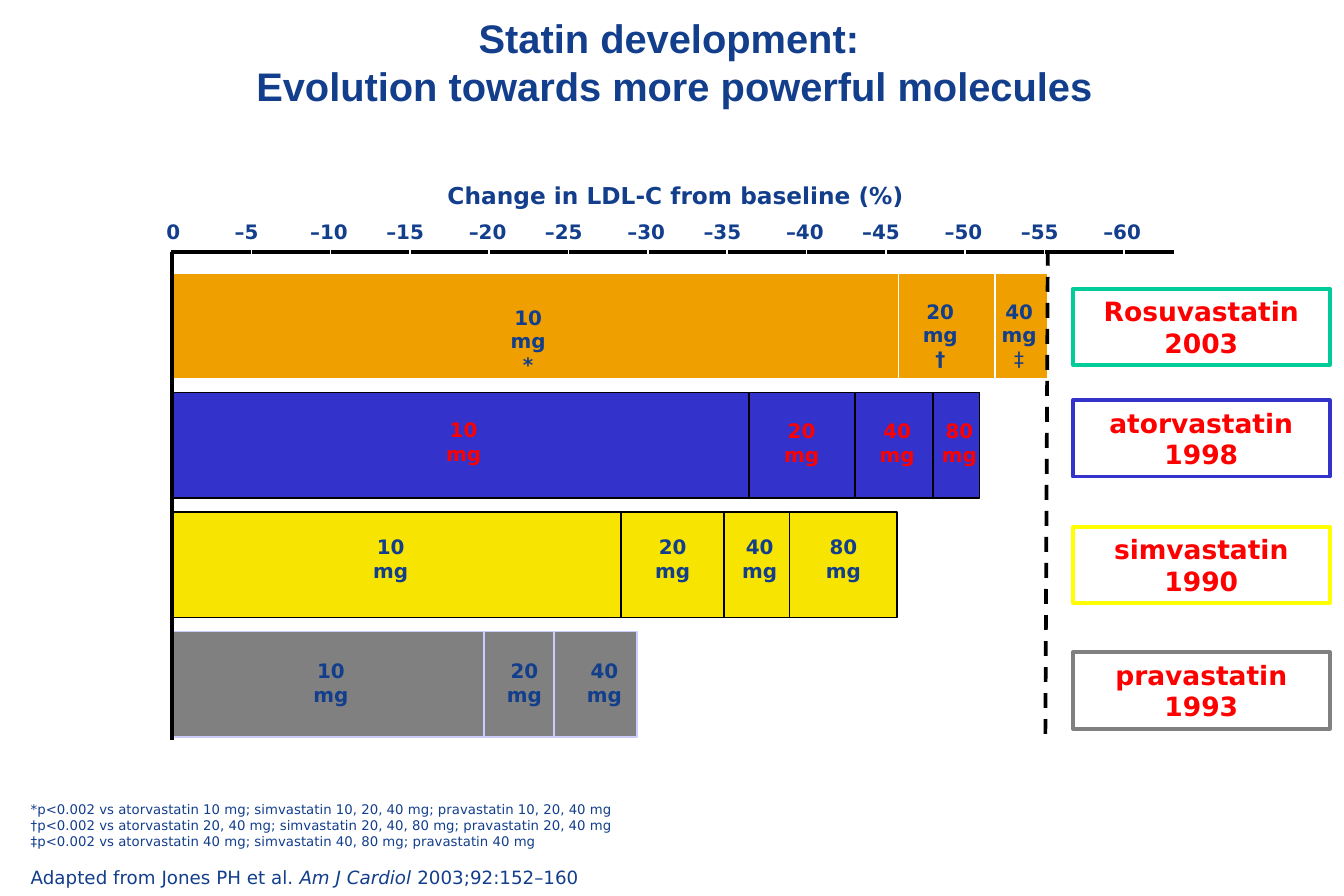
import pptx
import pptx.util
import pptx.dml.color
import pptx.enum.dml
import pptx.enum.shapes
import pptx.enum.text
import pptx.oxml.ns
from dataclasses import dataclass
from lxml import etree

Pt = pptx.util.Pt
ALIGN = pptx.enum.text.PP_ALIGN
ANCHOR = pptx.enum.text.MSO_ANCHOR


@dataclass(frozen=True)
class Theme:
    """Colours, fonts and type sizes of the slide."""
    navy: str = "123E8C"
    red: str = "FF0000"
    black: str = "000000"
    white: str = "FFFFFF"
    orange: str = "EFA000"
    blue: str = "3333CC"
    yellow: str = "F7E400"
    grey: str = "808080"
    lilac: str = "CCCCFF"
    green: str = "00CC99"
    bright_yellow: str = "FFFF00"
    head: str = "Arial"
    body: str = "DejaVu Sans"
    title: int = 24
    name: int = 16
    heading: int = 14
    label: int = 12
    source: int = 11
    note: int = 8


T = Theme()
BAR_PITCH, BAR_HEIGHT = 72, 63.6
TICK_STEP, TICK_COUNT = 47.8, 12

# Each dose: right edge, label centre, label drop, label lines
STATINS = [
    ("Rosuvastatin", "2003", T.orange, T.white, T.navy, T.green, 9.4, [
        (437.8, 214.6, 15.8, ["10", "mg", "*"]),
        (496.1, 463, 12.2, ["20", "mg", "†"]),
        (527.8, 510.5, 12.2, ["40", "mg", "‡"])]),
    ("atorvastatin", "1998", T.blue, T.black, T.red, T.blue, 4.6, [
        (347.8, 175.7, 11.5, ["10", "mg"]),
        (411.8, 379.4, 12.2, ["20", "mg"]),
        (458.6, 437, 12.2, ["40", "mg"]),
        (486.7, 474.5, 12.2, ["80", "mg"])]),
    ("simvastatin", "1990", T.yellow, T.black, T.navy, T.bright_yellow, 8.9, [
        (270.7, 131.8, 10.2, ["10", "mg"]),
        (332.6, 301.7, 10.2, ["20", "mg"]),
        (372.2, 354.2, 10.2, ["40", "mg"]),
        (437, 404.6, 10.2, ["80", "mg"])]),
    ("pravastatin", "1993", T.grey, T.lilac, T.navy, T.grey, 12.5, [
        (187.9, 95.8, 13, ["10", "mg"]),
        (230.4, 212.4, 13, ["20", "mg"]),
        (280.1, 260.6, 12.6, ["40", "mg"])]),
]

NOTES = [
    "*p<0.002 vs atorvastatin 10 mg; simvastatin 10, 20, 40 mg; pravastatin 10, 20, 40 mg",
    "†p<0.002 vs atorvastatin 20, 40 mg; simvastatin 20, 40, 80 mg; pravastatin 20, 40 mg",
    "‡p<0.002 vs atorvastatin 40 mg; simvastatin 40, 80 mg; pravastatin 40 mg",
]


def rgb(color):
    """Return the colour object of a hex string."""
    return pptx.dml.color.RGBColor.from_string(color)


def add_run(p, text, size, color=T.navy, bold=True, italic=False, font=T.body):
    """Add one formatted run to a paragraph."""
    r = p.add_run()
    r.text = text
    r.font.size, r.font.name = Pt(size), font
    r.font.bold, r.font.italic = bold, italic
    r.font.color.rgb = rgb(color)


def add_lines(tf, lines, size, color=T.navy):
    """Fill a text frame with centred bold lines."""
    for i, line in enumerate(lines):
        p = tf.add_paragraph() if i else tf.paragraphs[0]
        p.alignment = ALIGN.CENTER
        add_run(p, line, size, color, bold=line != "‡")


def add_box(s, x, y, w, h, wrap=True):
    """Add a text box and return its text frame."""
    tf = s.shapes.add_textbox(Pt(x), Pt(y), Pt(w), Pt(h)).text_frame
    tf.word_wrap = wrap
    return tf


def add_rect(s, x, y, w, h, fill, line, weight):
    """Add a rectangle, unfilled if fill is None."""
    sp = s.shapes.add_shape(pptx.enum.shapes.MSO_SHAPE.RECTANGLE, Pt(x), Pt(y), Pt(w), Pt(h))
    sp.shadow.inherit = False
    if fill:
        sp.fill.solid()
        sp.fill.fore_color.rgb = rgb(fill)
    else:
        sp.fill.background()
    sp.line.color.rgb, sp.line.width = rgb(line), Pt(weight)
    return sp


def add_line(s, x1, y1, x2, y2, color, weight):
    """Add a straight line without shadow."""
    c = s.shapes.add_connector(pptx.enum.shapes.MSO_CONNECTOR.STRAIGHT,
                               Pt(x1), Pt(y1), Pt(x2), Pt(y2))
    c.line.color.rgb, c.line.width = rgb(color), Pt(weight)
    etree.SubElement(c._element.spPr, pptx.oxml.ns.qn("a:effectLst"))
    return c


def add_title(s, x, y, w, h):
    """Place the two-line title."""
    p = add_box(s, x, y, w, h).paragraphs[0]
    p.alignment = ALIGN.CENTER
    add_run(p, "Statin development: ", T.title, font=T.head)
    p.add_line_break()
    add_run(p, "Evolution towards more powerful molecules", T.title, font=T.head)


def add_bar(s, x, y, h, fill, line, color, doses):
    """Draw one stacked bar with its dose labels."""
    left = 0
    for right, *_ in doses:
        add_rect(s, x + left, y, right - left, h, fill, line, 1)
        left = right
    for _, center, drop, lines in doses:
        tf = add_box(s, x + center - 18, y + drop, 36, 14.4 * len(lines) + 7.2, wrap=False)
        add_lines(tf, lines, T.label, color)


def add_axis(s, x, y, w, h):
    """Draw the axes, ticks, tick labels and heading."""
    add_lines(add_box(s, x + 123, y - 46, 361, 24.5), ["Change in LDL-C from baseline (%)"], T.heading)
    add_line(s, x - 0.7, y, x + w, y, T.black, 2)
    add_line(s, x, y, x, y + h, T.black, 2)
    for i in range(TICK_COUNT + 1):
        tick = x + i * TICK_STEP
        if i:
            add_line(s, tick, y + 1, tick, y - 6.5, T.white, 1)
        center = tick - (2.9 if i % 2 else 1 if i else -0.7)
        tf = add_box(s, center - 20, y - 23, 40, 21.6, wrap=False)
        add_lines(tf, [f"–{5 * i}" if i else "0"], T.label)


def add_name(s, x, y, w, h, lines, color):
    """Draw a framed statin name and year."""
    tf = add_rect(s, x, y, w, h, None, color, 2.25).text_frame
    tf.word_wrap, tf.vertical_anchor = True, ANCHOR.MIDDLE
    add_lines(tf, lines, T.name, T.red)


def add_chart_region(s, x, y, w, h):
    """Place the bars, axes, names and the reference line."""
    tops = [y + 12.7 + i * BAR_PITCH for i in range(len(STATINS))]
    for top, (_, _, fill, line, color, _, _, doses) in zip(tops, STATINS):
        add_bar(s, x, top, BAR_HEIGHT, fill, line, color, doses)
    add_axis(s, x, y, w, h)
    for top, (name, year, _, _, _, frame, drop, _) in zip(tops, STATINS):
        add_name(s, x + 542.9, top + drop, 154.8, 46.1, [name, year], frame)
    limit = add_line(s, x + 527.8, y - 0.7, x + 526.3, y + h + 0.5, T.black, 2.25)
    limit.line.dash_style = pptx.enum.dml.MSO_LINE.DASH


def add_footnotes(s, x, y, w, h):
    """Place the significance notes and the citation."""
    tf = add_box(s, x, y, w, h)
    tf.margin_left = tf.margin_right = tf.margin_top = tf.margin_bottom = 0
    for i, note in enumerate(NOTES):
        p = tf.add_paragraph() if i else tf.paragraphs[0]
        add_run(p, note, T.note, bold=False)
    p = tf.add_paragraph()
    p.space_before = Pt(10.3)
    for text, italic in [("Adapted from Jones PH et al. ", False), ("Am J Cardiol", True),
                         (" 2003;92:152–160", False)]:
        add_run(p, text, T.source, bold=False, italic=italic)


def main():
    """Build and save the slide."""
    prs = pptx.Presentation()
    prs.slide_width, prs.slide_height = Pt(810), Pt(540)
    s = prs.slides.add_slide(prs.slide_layouts[6])
    add_chart_region(s, 103.7, 151.9, 604, 293.8)
    add_footnotes(s, 18.5, 483, 616, 52.5)
    add_title(s, 18, 5, 777, 65.5)
    prs.save("out.pptx")


if __name__ == "__main__":
    main()
